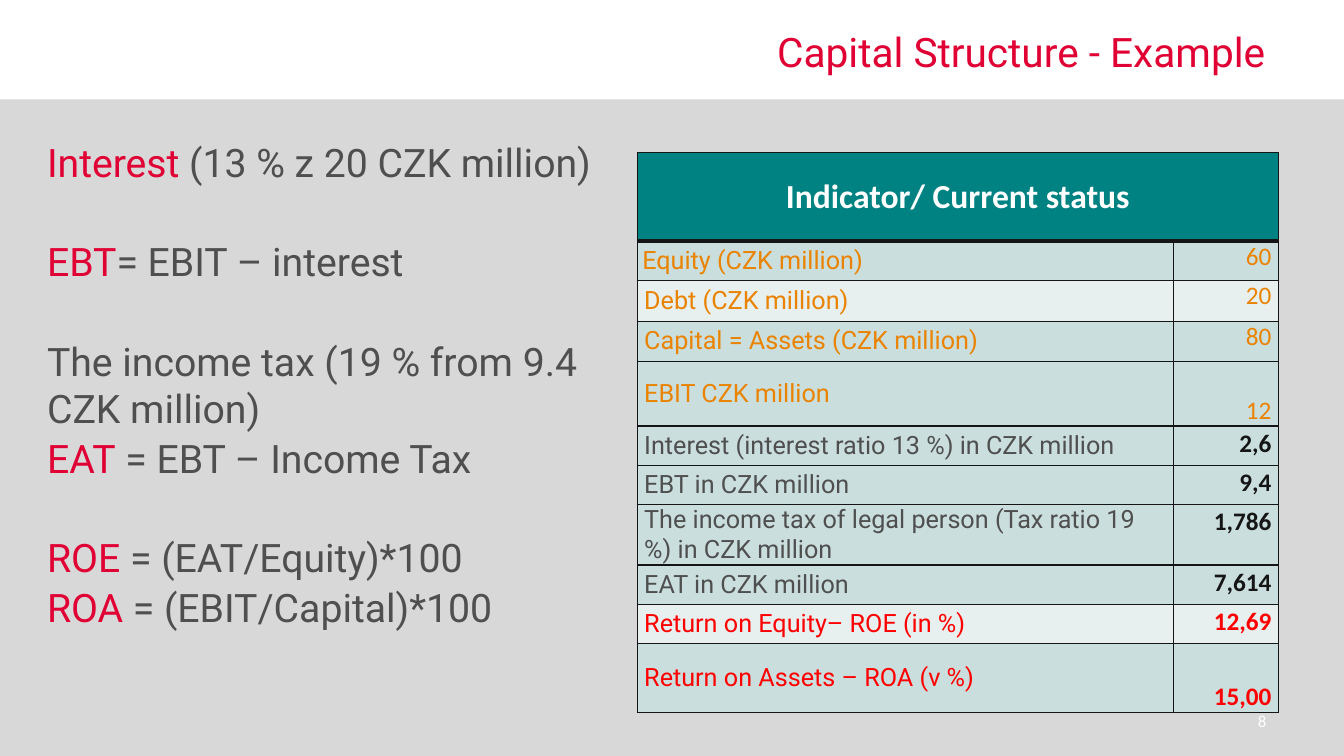
from dataclasses import dataclass

from lxml.etree import SubElement
from pptx import Presentation
from pptx.dml.color import RGBColor
from pptx.enum.shapes import MSO_SHAPE
from pptx.enum.text import MSO_ANCHOR, PP_ALIGN
from pptx.oxml.ns import qn
from pptx.util import Pt


@dataclass(frozen=True)
class Theme:
    """Colours, fonts and type sizes of the slide."""

    band: str = "D8D8D8"
    accent: str = "E00034"
    body: str = "4F4F4F"
    ink: str = "151515"
    white: str = "FFFFFF"
    orange: str = "E98300"
    red: str = "FF0000"
    header_fill: str = "008282"
    row_fill: str = "CBDEDE"
    light_fill: str = "E7EFEF"
    text_font: str = "Roboto"
    number_font: str = "Calibri"
    title_size: float = 29
    body_size: float = 28
    header_size: float = 24
    cell_size: float = 18
    page_size: float = 12


class SlideBuilder:
    """Draws styled elements on one slide."""

    def __init__(self, slide, theme):
        self.slide = slide
        self.theme = theme

    def style(self, run, font, size, color, bold=False):
        """Format one run."""
        run.font.name = font
        run.font.size = Pt(size)
        run.font.bold = bold
        run.font.color.rgb = RGBColor.from_string(color)

    def band(self, left, top, width, height):
        """Draw the plain background band."""
        shape = self.slide.shapes.add_shape(
            MSO_SHAPE.RECTANGLE, Pt(left), Pt(top), Pt(width), Pt(height))
        shape.shadow.inherit = False
        shape.fill.solid()
        shape.fill.fore_color.rgb = RGBColor.from_string(self.theme.band)
        shape.line.fill.background()

    def text_box(self, left, top, width, height):
        """Add an empty wrapping text box and return its text frame."""
        shape = self.slide.shapes.add_textbox(Pt(left), Pt(top), Pt(width), Pt(height))
        shape.text_frame.word_wrap = True
        return shape.text_frame

    def label(self, bounds, text, font, size, color):
        """Add one right-aligned line, centred vertically."""
        frame = self.text_box(*bounds)
        frame.vertical_anchor = MSO_ANCHOR.MIDDLE
        frame.text = text
        paragraph = frame.paragraphs[0]
        paragraph.alignment = PP_ALIGN.RIGHT
        self.style(paragraph.runs[0], font, size, color)

    def formulas(self, bounds, lines):
        """Add lines of (space before, accented term, remainder)."""
        theme = self.theme
        frame = self.text_box(*bounds)
        for index, (space, term, remainder) in enumerate(lines):
            paragraph = frame.add_paragraph() if index else frame.paragraphs[0]
            paragraph.space_before = Pt(space)
            paragraph.space_after = Pt(1)
            for text, color in ((term, theme.accent), (remainder, theme.body)):
                if text:
                    run = paragraph.add_run()
                    run.text = text
                    self.style(run, theme.text_font, theme.body_size, color)

    def borders(self, cell, top=1, bottom=1):
        """Outline a cell with the given line widths."""
        properties = cell._tc.get_or_add_tcPr()
        for side, width in (("L", 1), ("R", 1), ("T", top), ("B", bottom)):
            line = SubElement(properties, qn(f"a:ln{side}"), w=str(Pt(width)))
            fill = SubElement(line, qn("a:solidFill"))
            SubElement(fill, qn("a:srgbClr"), val=self.theme.ink)

    def cell(self, cell, text, font, size, color, fill, bold=False,
             alignment=PP_ALIGN.LEFT, anchor=MSO_ANCHOR.MIDDLE):
        """Fill and format one table cell."""
        cell.fill.solid()
        cell.fill.fore_color.rgb = RGBColor.from_string(fill)
        cell.margin_left = cell.margin_right = Pt(5)
        cell.margin_top = cell.margin_bottom = 0
        cell.vertical_anchor = anchor
        cell.text_frame.text = text
        paragraph = cell.text_frame.paragraphs[0]
        paragraph.alignment = alignment
        if bold and alignment == PP_ALIGN.RIGHT:
            paragraph.line_spacing = 1.07
        self.style(paragraph.runs[0], font, size, color, bold)

    def indicator_table(self, left, top, widths, header_height, header, rows):
        """Add the indicator table under a merged header."""
        theme = self.theme
        heights = [header_height] + [row[0] for row in rows]
        frame = self.slide.shapes.add_table(
            len(heights), len(widths), Pt(left), Pt(top), Pt(sum(widths)), Pt(sum(heights)))
        table = frame.table
        table.first_row = table.horz_banding = False
        for column, width in zip(table.columns, widths):
            column.width = Pt(width)
        for row, height in zip(table.rows, heights):
            row.height = Pt(height)
        for index in range(len(heights)):
            for column in range(len(widths)):
                self.borders(table.cell(index, column),
                             top=3 if index == 1 else 1, bottom=3 if index == 0 else 1)
        table.cell(0, 0).merge(table.cell(0, 1))
        self.cell(table.cell(0, 0), header, theme.number_font, theme.header_size,
                  theme.white, theme.header_fill, True, PP_ALIGN.CENTER)
        for index, (_, name, value, name_color, value_color, fill, anchor) in enumerate(rows, 1):
            self.cell(table.cell(index, 0), name, theme.text_font, theme.cell_size,
                      name_color, fill)
            self.cell(table.cell(index, 1), value, theme.number_font, theme.cell_size,
                      value_color, fill, value_color != theme.orange, PP_ALIGN.RIGHT, anchor)
        table.cell(1, 0).margin_left = Pt(3.6)


def main():
    """Build and save the slide."""
    theme = Theme()
    presentation = Presentation()
    presentation.slide_width, presentation.slide_height = Pt(960), Pt(540)
    slide = presentation.slides.add_slide(presentation.slide_layouts[6])
    builder = SlideBuilder(slide, theme)

    builder.band(0, 71, 960, 469)
    gap = 36.5
    builder.formulas((26.5, 95, 420, 323), [
        (0, "Interest", " (13 % z 20 CZK million)"),
        (gap, "EBT", "= EBIT – interest"),
        (gap, "", "The income tax (19 % from 9.4 CZK million)"),
        (1, "EAT", " = EBT – Income Tax"),
        (gap, "ROE ", "= (EAT/Equity)*100"),
        (1, "ROA", " = (EBIT/Capital)*100"),
    ])

    top, bottom = MSO_ANCHOR.TOP, MSO_ANCHOR.BOTTOM
    given = (theme.orange, theme.orange)
    derived = (theme.body, theme.ink)
    result = (theme.red, theme.red)
    plain, light = theme.row_fill, theme.light_fill
    builder.indicator_table(455.2, 108.7, (383, 75), 63.5, "Indicator/ Current status", [
        (28.4, "Equity (CZK million)", "60", *given, plain, top),
        (29, "Debt (CZK million)", "20", *given, light, top),
        (28.4, "Capital = Assets (CZK million)", "80", *given, plain, top),
        (46.4, "EBIT CZK million", "12", *given, plain, bottom),
        (28, "Interest (interest ratio 13 %) in CZK million", "2,6", *derived, plain, top),
        (28, "EBT in CZK million", "9,4", *derived, plain, top),
        (42.6, "The income tax of legal person (Tax ratio 19 %) in CZK million", "1,786",
         *derived, plain, top),
        (28.2, "EAT in CZK million", "7,614", *derived, plain, top),
        (28.2, "Return on Equity– ROE (in %)", "12,69", *result, light, top),
        (49, "Return on Assets – ROA (v %)", "15,00", *result, plain, bottom),
    ])
    builder.label((687.6, 500.4, 224, 28.8), "8", theme.number_font, theme.page_size, theme.white)
    builder.label((244.8, 13, 666.7, 47.5), "Capital Structure - Example",
                  theme.text_font, theme.title_size, theme.accent)
    presentation.save("out.pptx")


if __name__ == "__main__":
    main()
